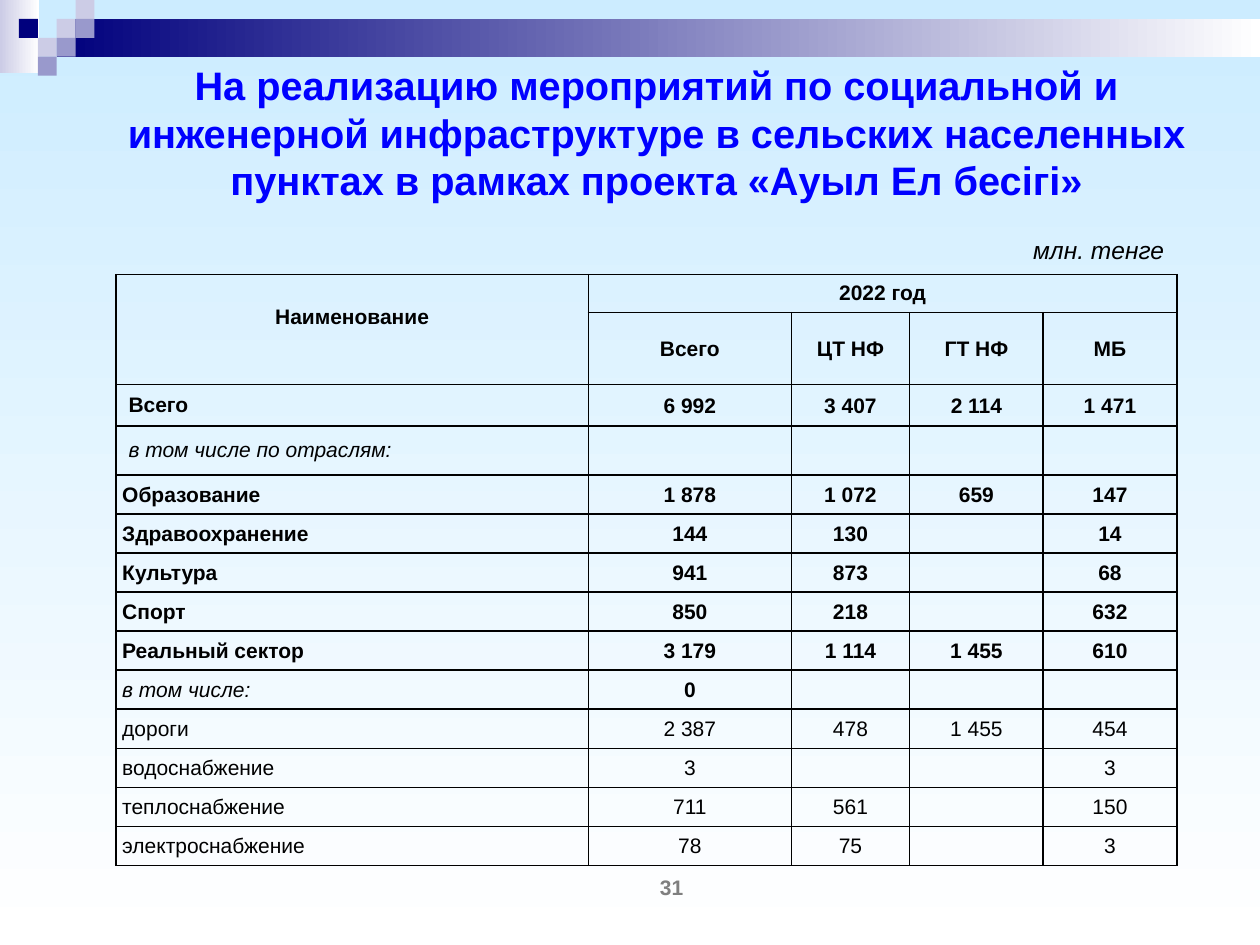
"""Build the slide on village infrastructure funding for 2022."""
from dataclasses import dataclass

from lxml.etree import SubElement
from pptx import Presentation
from pptx.dml.color import RGBColor
from pptx.enum.shapes import MSO_SHAPE
from pptx.enum.text import MSO_ANCHOR, PP_ALIGN
from pptx.oxml.ns import qn
from pptx.util import Inches, Pt


@dataclass(frozen=True)
class Theme:
    font: str = "Arial"
    sky: str = "CCECFF"
    white: str = "FFFFFF"
    navy: str = "00007D"
    lilac: str = "CCCCE6"
    violet: str = "9999CC"
    blue: str = "0000FF"
    black: str = "000000"
    grey: str = "7F7F7F"
    title: float = 22.7
    units: float = 14
    body: float = 12
    border: float = 1


THEME = Theme()
SQUARE = 0.15
COLUMNS = (3.75, 1.61, 0.94, 1.06, 1.06)
HEAD_ROWS = (0.35, 0.29, 0.57, 0.33, 0.39)
SECTOR_ROW = 0.31
TIGHT = (0.01, 0.01, 0.01, 0)
SECTOR = (0.05, 0.01, 0.01, 0)
ROOMY = (0.1, 0.05, 0.1, 0.05)
HEADINGS = ("Всего", "ЦТ НФ", "ГТ НФ", "МБ")
FUNDING = (
    ("Всего", "bold", ("6 992", "3 407", "2 114", "1 471")),
    ("в том числе по отраслям:", "italic", ("", "", "", "")),
    ("Образование", "bold", ("1 878", "1 072", "659", "147")),
    ("Здравоохранение", "bold", ("144", "130", "", "14")),
    ("Культура", "bold", ("941", "873", "", "68")),
    ("Спорт", "bold", ("850", "218", "", "632")),
    ("Реальный сектор", "bold", ("3 179", "1 114", "1 455", "610")),
    ("в том числе:", "italic", ("0", "", "", "")),
    ("дороги", "plain", ("2 387", "478", "1 455", "454")),
    ("водоснабжение", "plain", ("3", "", "", "3")),
    ("теплоснабжение", "plain", ("711", "561", "", "150")),
    ("электроснабжение", "plain", ("78", "75", "", "3")),
)


def shade(fill, start, end, angle=0):
    fill.gradient()
    fill.gradient_angle = angle
    for stop, color in zip(fill.gradient_stops, (start, end)):
        stop.color.rgb = RGBColor.from_string(color)


def add_block(slide, left, top, width, height, start, end=None):
    block = slide.shapes.add_shape(
        MSO_SHAPE.RECTANGLE, *map(Inches, (left, top, width, height)))
    block.shadow.inherit = False
    block.line.fill.background()
    if end:
        shade(block.fill, start, end)
    else:
        block.fill.solid()
        block.fill.fore_color.rgb = RGBColor.from_string(start)


def write(paragraph, text, size, color=THEME.black, style="bold",
          align=PP_ALIGN.CENTER):
    paragraph.text = text
    paragraph.alignment = align
    font = paragraph.font
    font.name, font.size = THEME.font, Pt(size)
    font.bold, font.italic = style == "bold", style == "italic"
    font.color.rgb = RGBColor.from_string(color)


def set_margins(holder, margins):
    (holder.margin_left, holder.margin_top,
     holder.margin_right, holder.margin_bottom) = map(Inches, margins)


def add_label(slide, box, text, size, color, margins):
    frame = slide.shapes.add_textbox(*map(Inches, box)).text_frame
    frame.word_wrap = True
    frame.vertical_anchor = MSO_ANCHOR.MIDDLE
    set_margins(frame, margins)
    write(frame.paragraphs[0], text, size, color)


def set_borders(cell, visible_sides):
    properties = cell._tc.get_or_add_tcPr()
    for side in "LRTB":
        line = SubElement(properties, qn(f"a:ln{side}"), w=str(Pt(THEME.border)))
        if side in visible_sides:
            solid = SubElement(line, qn("a:solidFill"))
            SubElement(solid, qn("a:srgbClr"), val=THEME.black)
        else:
            SubElement(line, qn("a:noFill"))
    cell.fill.background()


def fill_cell(cell, text, margins=TIGHT, size=THEME.body, **look):
    cell.vertical_anchor = MSO_ANCHOR.MIDDLE
    set_margins(cell, margins)
    write(cell.text_frame.paragraphs[0], text, size, **look)


def add_funding_table(slide):
    heights = HEAD_ROWS + (SECTOR_ROW,) * (len(FUNDING) - 2)
    table = slide.shapes.add_table(
        len(heights), len(COLUMNS), Inches(0.92), Inches(1.83),
        Inches(sum(COLUMNS)), Inches(sum(heights))).table
    table.first_row = table.horz_banding = False
    for column, width in zip(table.columns, COLUMNS):
        column.width = Inches(width)
    for index, (row, height) in enumerate(zip(table.rows, heights)):
        row.height = Inches(height)
        for cell in row.cells:
            set_borders(cell, "LRTB" if index else "B")
            fill_cell(cell, "")
    for first, last in (((0, 1), (0, 4)), ((1, 0), (2, 0)), ((1, 1), (1, 4))):
        table.cell(*first).merge(table.cell(*last))

    units = table.cell(0, 1)
    fill_cell(units, "млн. тенге", ROOMY, THEME.units, style="italic",
              align=PP_ALIGN.RIGHT)
    units.vertical_anchor = MSO_ANCHOR.TOP
    fill_cell(table.cell(1, 0), "Наименование", (0.1, 0.05, 0.1, 0.24))
    fill_cell(table.cell(1, 1), "2022 год", ROOMY)
    for column, heading in enumerate(HEADINGS, 1):
        fill_cell(table.cell(2, column), heading)
    for row, (name, style, amounts) in enumerate(FUNDING, 3):
        margins = ROOMY if row < len(HEAD_ROWS) else SECTOR
        fill_cell(table.cell(row, 0), name, margins, style=style,
                  align=PP_ALIGN.LEFT)
        amount_style = "plain" if style == "plain" else "bold"
        for column, amount in enumerate(amounts, 1):
            fill_cell(table.cell(row, column), amount, style=amount_style)


def add_banner(slide):
    add_block(slide, 0, 0, 0.31, 0.58, THEME.lilac, THEME.white)
    add_block(slide, 0.45, 0.15, 9.55, 0.3, THEME.navy, THEME.white)
    mosaic = ((3, 1, THEME.lilac), (4, 0, THEME.lilac), (4, 1, THEME.violet),
              (2, 2, THEME.lilac), (1, 1, THEME.navy), (3, 2, THEME.violet),
              (2, 3, THEME.violet))
    for column, row, color in mosaic:
        add_block(slide, column * SQUARE, row * SQUARE, SQUARE, SQUARE, color)


def main():
    deck = Presentation()
    deck.slide_width, deck.slide_height = Inches(10), Inches(7.5)
    slide = deck.slides.add_slide(deck.slide_layouts[6])
    shade(slide.background.fill, THEME.sky, THEME.white, 270)
    add_banner(slide)
    add_label(slide, (0.59, 0.75, 9.24, 0.83),
              "На реализацию мероприятий по социальной и инженерной "
              "инфраструктуре в сельских населенных пунктах в рамках "
              "проекта «Ауыл Ел бесігі»",
              THEME.title, THEME.blue, (0.1, 0, 0.1, 0.23))
    add_funding_table(slide)
    add_label(slide, (4.33, 6.92, 2, 0.24), "31", THEME.body, THEME.grey,
              (0.1, 0, 0.1, 0))
    deck.save("out.pptx")


if __name__ == "__main__":
    main()
